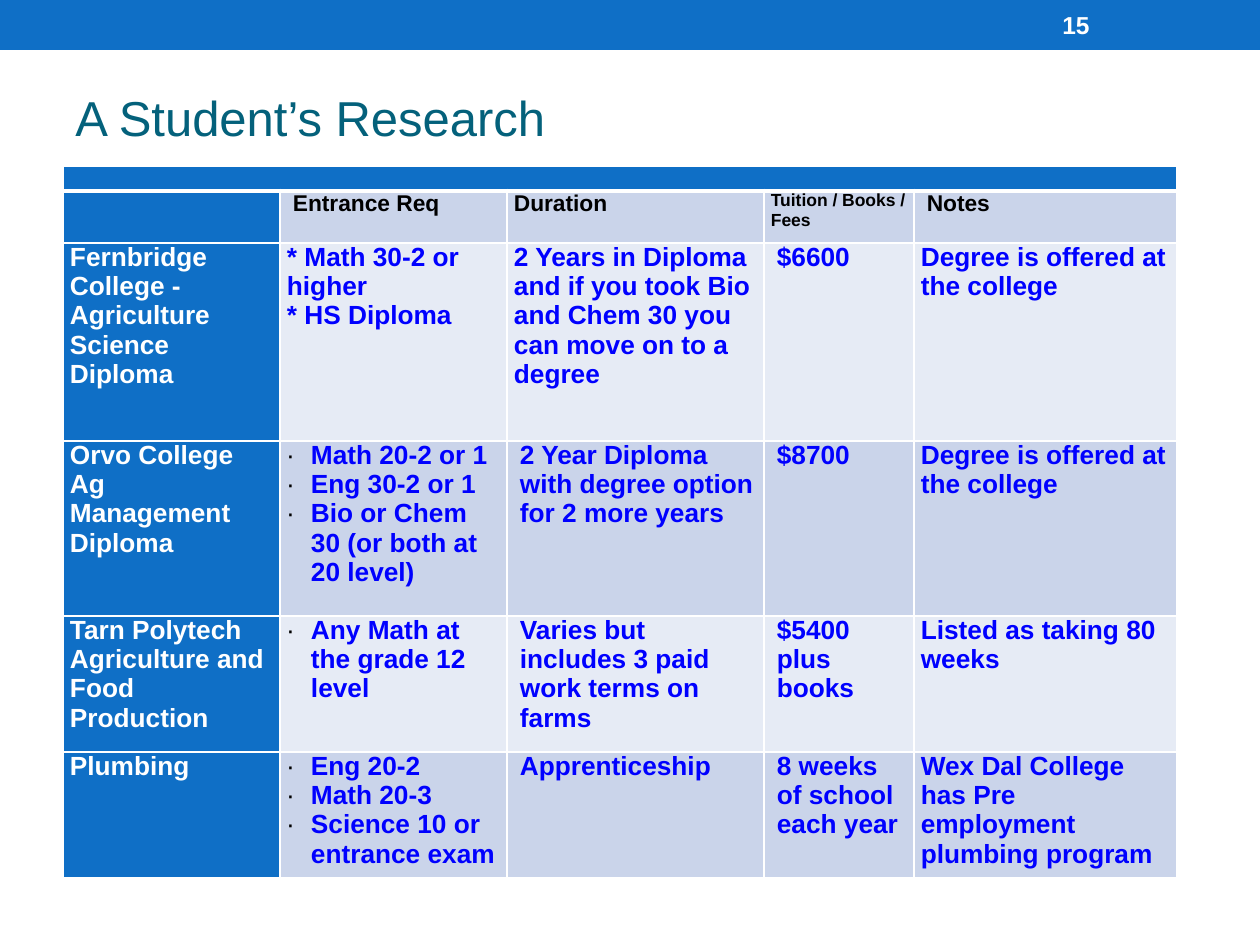
import pptx
import pptx.dml.color
import pptx.enum.shapes
import pptx.enum.text
import pptx.oxml.ns
import pptx.util
import lxml.etree

PX = 914400 // 126
FONT = "Arial"
COLORS = {
    "bar": "0F6FC6",
    "title": "04617B",
    "band_dark": "CAD4EA",
    "band_light": "E6EBF5",
    "answer": "0000FF",
    "black": "000000",
    "white": "FFFFFF",
}
COLUMN_WIDTHS = [217, 227, 257, 150, 263]
ROW_HEIGHTS = [25, 52, 198, 175, 136, 116]
HEADINGS = [("Entrance Req", 13, 6), ("Duration", 13, 0),
            ("Tuition / Books / Fees", 10, 0), ("Notes", 13, 6)]
PROGRAMS = [
    (["Fernbridge College - Agriculture Science Diploma"],
     ["* Math 30-2 or higher", "* HS Diploma"],
     "2 Years in Diploma and if you took Bio and Chem 30 you can move on to a degree",
     "$6600", "Degree is offered at the college"),
    (["Orvo College", "Ag Management Diploma"],
     ["Math 20-2 or 1", "Eng 30-2 or 1", "Bio or Chem 30 (or both at 20 level)"],
     "2 Year Diploma with degree option for 2 more years",
     "$8700", "Degree is offered at the college"),
    (["Tarn Polytech", "Agriculture and Food Production"],
     ["Any Math at the grade 12 level"],
     "Varies but includes 3 paid work terms on farms",
     "$5400 plus books", "Listed as taking 80 weeks"),
    (["Plumbing"],
     ["Eng 20-2", "Math 20-3", "Science 10 or entrance exam"],
     "Apprenticeship", "8 weeks of school each year",
     "Wex Dal College has Pre employment plumbing program"),
]


def px(length):
    return pptx.util.Emu(length * PX)


def rgb(name):
    return pptx.dml.color.RGBColor.from_string(COLORS[name])


def add_xml(parent, tag, **attributes):
    return lxml.etree.SubElement(parent, pptx.oxml.ns.qn(tag), attributes)


def write(frame, lines, size=15, color="answer", bold=True, indent=0,
          bulleted=False, space_above=0):
    frame.word_wrap = True
    for index, line in enumerate(lines):
        paragraph = frame.add_paragraph() if index else frame.paragraphs[0]
        paragraph.alignment = pptx.enum.text.PP_ALIGN.LEFT
        paragraph.space_before = px(0 if index else space_above)
        run = paragraph.add_run()
        run.text = line
        run.font.name = FONT
        run.font.size = pptx.util.Pt(size)
        run.font.bold = bold
        run.font.color.rgb = rgb(color)
        properties = paragraph._p.get_or_add_pPr()
        properties.set("marL", str(px(24 if bulleted else indent)))
        properties.set("indent", str(px(-30 if bulleted else 0)))
        if bulleted:
            bullet_color = add_xml(properties, "a:buClr")
            add_xml(bullet_color, "a:srgbClr", val=COLORS["black"])
            add_xml(properties, "a:buFont", typeface=FONT)
            add_xml(properties, "a:buChar", char="∙")


def add_label(slide, left, top, width, height, text, **text_format):
    frame = slide.shapes.add_textbox(px(left), px(top), px(width), px(height)).text_frame
    frame.vertical_anchor = pptx.enum.text.MSO_ANCHOR.MIDDLE
    write(frame, [text], **text_format)


def add_top_bar(slide):
    bar = slide.shapes.add_shape(
        pptx.enum.shapes.MSO_SHAPE.RECTANGLE, 0, 0, px(1260), px(50))
    bar.shadow.inherit = False
    bar.fill.solid()
    bar.fill.fore_color.rgb = rgb("bar")
    bar.line.fill.background()


def style_cell(cell, fill, right_margin=7, bottom_border=1):
    cell.margin_left, cell.margin_right = px(7), px(right_margin)
    cell.margin_top = cell.margin_bottom = 0
    properties = cell._tc.get_or_add_tcPr()
    for side in "LRTB":
        width = pptx.util.Pt(bottom_border if side == "B" else 1)
        border = add_xml(properties, "a:ln" + side, w=str(width))
        border_fill = add_xml(border, "a:solidFill")
        add_xml(border_fill, "a:srgbClr", val=COLORS["white"])
    cell.fill.solid()
    cell.fill.fore_color.rgb = rgb(fill)


def shrink_empty(cell):
    add_xml(cell.text_frame.paragraphs[0]._p, "a:endParaRPr", sz="500")


def add_research_table(slide):
    table = slide.shapes.add_table(
        len(ROW_HEIGHTS), len(COLUMN_WIDTHS), px(63), px(166),
        px(sum(COLUMN_WIDTHS)), px(sum(ROW_HEIGHTS))).table
    table.first_row = table.horz_banding = False
    for column, width in zip(table.columns, COLUMN_WIDTHS):
        column.width = px(width)
    for row, height in zip(table.rows, ROW_HEIGHTS):
        row.height = px(height)

    for cell in table.rows[0].cells:
        style_cell(cell, "bar", bottom_border=3)
        shrink_empty(cell)
    table.cell(0, 0).merge(table.cell(0, len(COLUMN_WIDTHS) - 1))

    style_cell(table.cell(1, 0), "bar")
    shrink_empty(table.cell(1, 0))
    for column, (heading, size, indent) in enumerate(HEADINGS, 1):
        cell = table.cell(1, column)
        style_cell(cell, "band_dark")
        write(cell.text_frame, [heading], size=size, color="black", indent=indent)

    for row, (program, entrance, duration, cost, note) in enumerate(PROGRAMS, 2):
        first = row == 2
        band = "band_dark" if row % 2 else "band_light"
        cells = list(table.rows[row].cells)
        style_cell(cells[0], "bar", right_margin=12)
        for cell in cells[1:]:
            style_cell(cell, band)
        write(cells[0].text_frame, program, color="white", space_above=10)
        write(cells[1].text_frame, entrance, bulleted=not first)
        write(cells[2].text_frame, [duration], indent=0 if first else 6)
        write(cells[3].text_frame, [cost], indent=6)
        write(cells[4].text_frame, [note])


def main():
    deck = pptx.Presentation()
    deck.slide_width, deck.slide_height = px(1260), px(945)
    slide = deck.slides.add_slide(deck.slide_layouts[6])
    add_top_bar(slide)
    add_label(slide, 63, 73, 1134, 87, "A Student’s Research",
              size=28, color="title", bold=False)
    add_research_table(slide)
    add_label(slide, 1050, 2, 147, 45, "15", size=14, color="white")
    deck.save("out.pptx")


if __name__ == "__main__":
    main()
